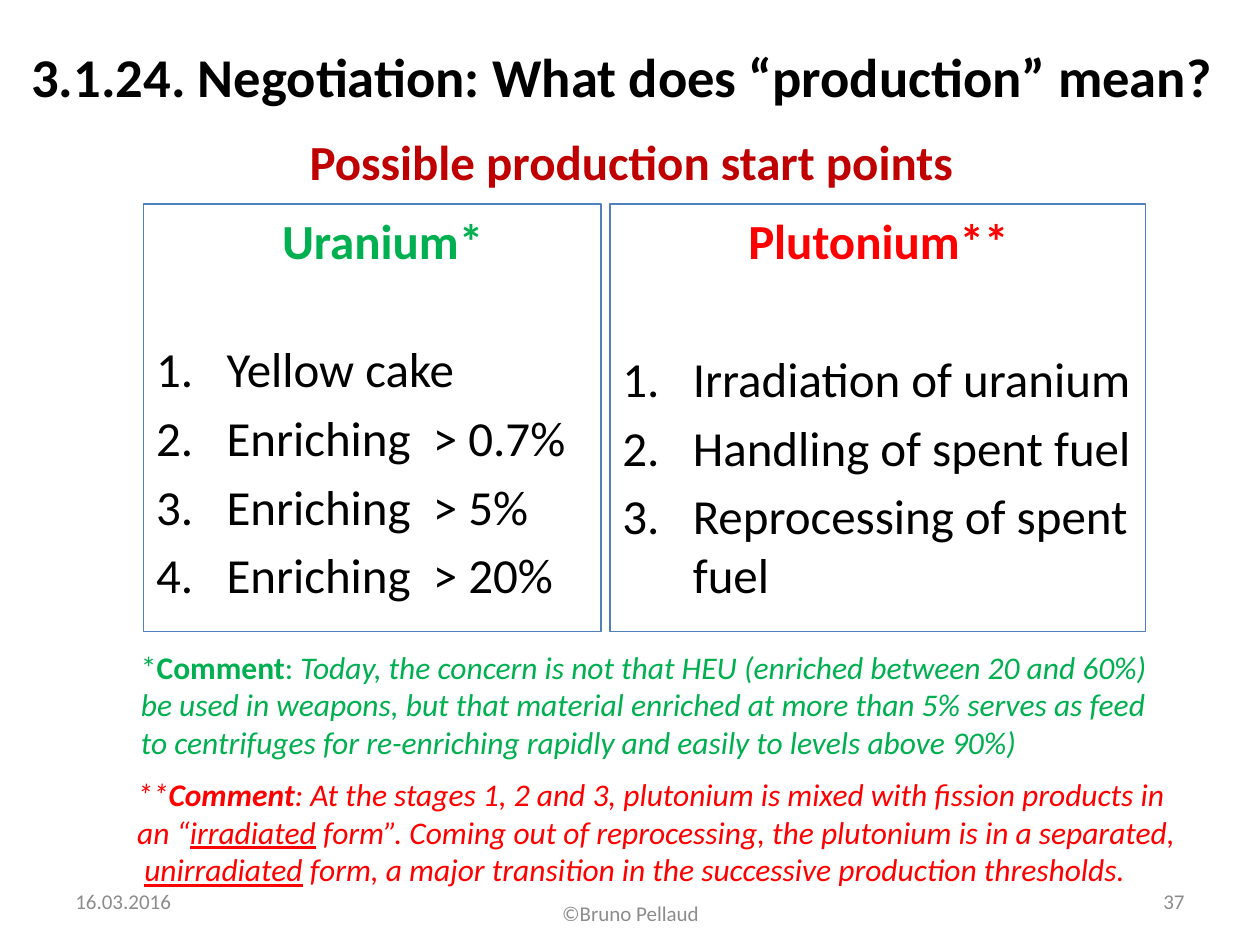
from lxml.etree import SubElement
from pptx import Presentation
from pptx.dml.color import RGBColor
from pptx.enum.shapes import MSO_SHAPE
from pptx.enum.text import MSO_ANCHOR, PP_ALIGN
from pptx.oxml.ns import qn
from pptx.util import Inches, Pt

BLACK = RGBColor(0x00, 0x00, 0x00)
DARK_RED = RGBColor(0xC0, 0x00, 0x00)
GREEN = RGBColor(0x00, 0xB0, 0x50)
RED = RGBColor(0xFF, 0x00, 0x00)
GRAY = RGBColor(0x8C, 0x8C, 0x8C)
BLUE = RGBColor(0x4F, 0x81, 0xBD)
FONT = "Calibri"
BODY_SIZE = 28
ITEM_GAP = 0.2 * BODY_SIZE
LIST_INDENT = 0.56
PANEL_TOP, PANEL_HEIGHT = 1.62, 3.39

# Content: a paragraph is a list of (text, style letters) spans
HEADING = "3.1.24. Negotiation: What does “production” mean?"
TITLE = "Possible production start points"
PANELS = [
    # heading, colour, left, width, space above the list in points, items
    ("Uranium*", GREEN, 1.14, 3.63, 39.8,
     ["Yellow cake", "Enriching  > 0.7%", "Enriching  > 5%", "Enriching  > 20%"]),
    ("Plutonium**", RED, 4.84, 4.25, 45.4,
     ["Irradiation of uranium", "Handling of spent fuel",
      "Reprocessing of spent fuel"]),
]
COMMENTS = [
    (GREEN, (1.02, 5.09, 8.19, 1.01), [
        [("*", ""), ("Comment", "b"), (": ", ""),
         ("Today, the concern is not that HEU (enriched between 20 and 60%) "
          "be used in weapons, but that material enriched at more than 5% "
          "serves as feed to centrifuges for re-enriching rapidly and easily "
          "to levels above 90%)", "i")],
    ]),
    (RED, (0.99, 6.1, 8.58, 1.01), [
        [("**", "i"), ("Comment", "bi"),
         (": At the stages 1, 2 and 3, plutonium is mixed with fission "
          "products in", "i")],
        [("an “", "i"), ("irradiated", "iu"),
         (" form”. Coming out of reprocessing, the plutonium is in a "
          "separated,", "i")],
        [(" ", "i"), ("unirradiated", "iu"),
         (" form, a major transition in the successive production "
          "thresholds.", "i")],
    ]),
]
FOOTERS = [
    ("16.03.2016", PP_ALIGN.LEFT, (0.5, 6.95, 2.33, 0.4)),
    ("37", PP_ALIGN.RIGHT, (7.17, 6.95, 2.33, 0.4)),
    ("©Bruno Pellaud", PP_ALIGN.CENTER, (3.42, 7.05, 3.17, 0.4)),
]


def write_paragraph(para, spans, size, color, align=PP_ALIGN.LEFT, before=0):
    para.alignment = align
    para.space_before = Pt(before)
    for text, style in spans:
        span = para.add_run()
        span.text = text
        font = span.font
        font.name, font.size = FONT, Pt(size)
        font.color.rgb = color
        font.bold, font.italic = "b" in style, "i" in style
        font.underline = "u" in style


def indent(para, left, hanging=0, numbered=False):
    properties = para._p.get_or_add_pPr()
    properties.set("marL", str(Inches(left)))
    properties.set("indent", str(-Inches(hanging)))
    if numbered:
        SubElement(properties, qn("a:buFont"), typeface=FONT)
        SubElement(properties, qn("a:buAutoNum"), type="arabicPeriod")


def add_text(page, at, paragraphs, anchor=MSO_ANCHOR.MIDDLE, **format):
    frame = page.shapes.add_textbox(*map(Inches, at)).text_frame
    frame.word_wrap = True
    frame.vertical_anchor = anchor
    for number, spans in enumerate(paragraphs):
        para = frame.add_paragraph() if number else frame.paragraphs[0]
        write_paragraph(para, spans, **format)


def add_panel(page, heading, color, left, width, list_gap, items):
    box = page.shapes.add_shape(
        MSO_SHAPE.RECTANGLE,
        *map(Inches, (left, PANEL_TOP, width, PANEL_HEIGHT)))
    box.shadow.inherit = False
    box.fill.background()
    box.line.color.rgb = BLUE
    box.line.width = Pt(0.75)
    frame = box.text_frame
    frame.word_wrap = True
    frame.vertical_anchor = MSO_ANCHOR.TOP
    write_paragraph(frame.paragraphs[0], [(heading, "b")], BODY_SIZE, color)
    indent(frame.paragraphs[0], 1)
    for number, item in enumerate(items):
        para = frame.add_paragraph()
        write_paragraph(para, [(item, "")], BODY_SIZE, BLACK,
                        before=ITEM_GAP if number else list_gap)
        indent(para, LIST_INDENT, hanging=LIST_INDENT, numbered=True)


def main():
    deck = Presentation()
    deck.slide_width, deck.slide_height = Inches(10), Inches(7.5)
    page = deck.slides.add_slide(deck.slide_layouts[6])

    # Heading and title
    add_text(page, (0, 0.29, 9.87, 0.62), [[(HEADING, "b")]],
             size=31.2, color=BLACK, align=PP_ALIGN.CENTER)
    add_text(page, (0.51, 0.84, 9, 0.87), [[(TITLE, "b")]],
             size=BODY_SIZE, color=DARK_RED, align=PP_ALIGN.CENTER)

    # Numbered lists side by side
    for panel in PANELS:
        add_panel(page, *panel)

    # Comments and footer
    for color, at, paragraphs in COMMENTS:
        add_text(page, at, paragraphs, anchor=MSO_ANCHOR.TOP,
                 size=18, color=color)
    for text, align, at in FOOTERS:
        add_text(page, at, [[(text, "")]], size=12, color=GRAY, align=align)

    deck.save("out.pptx")


if __name__ == "__main__":
    main()
